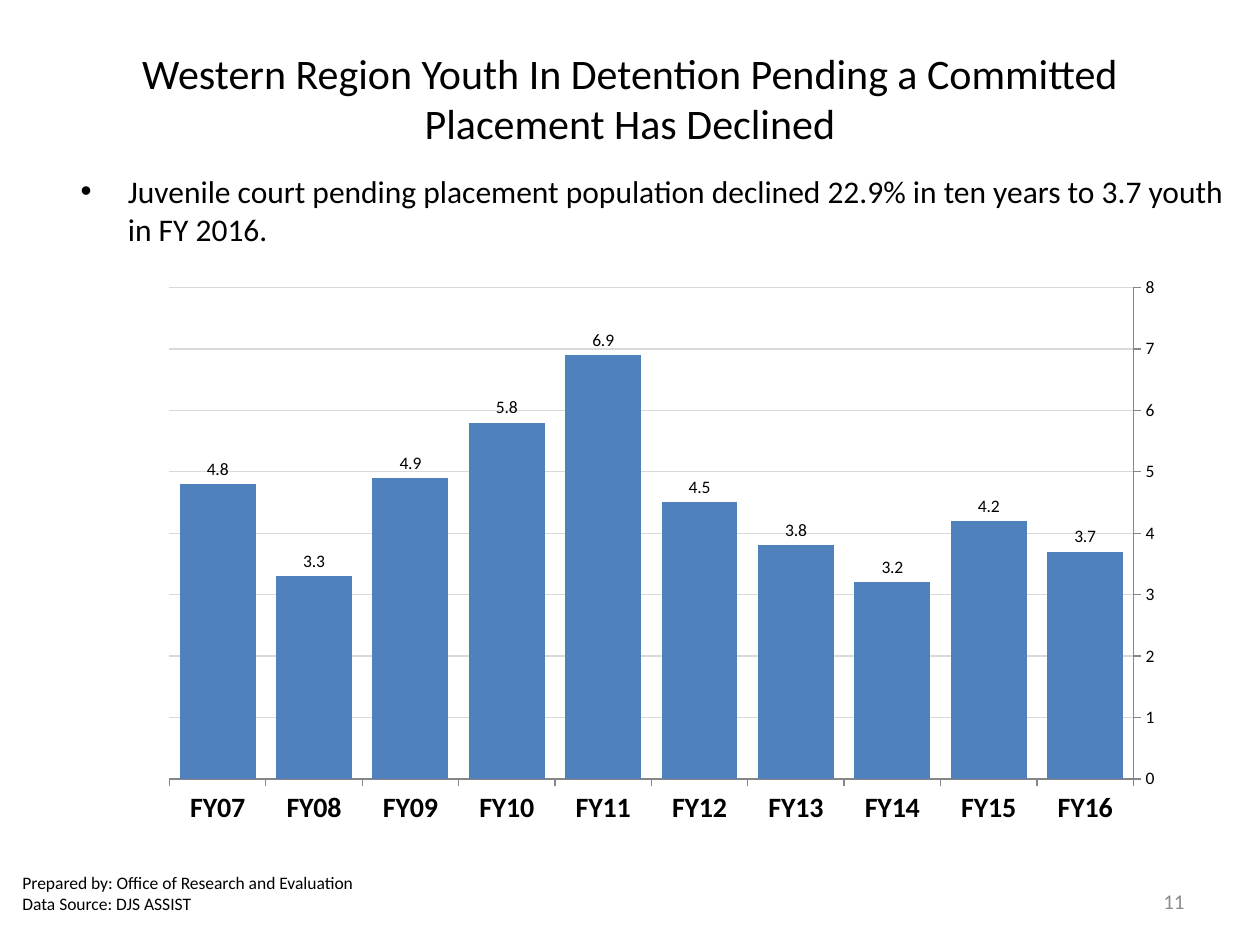
from lxml.etree import SubElement
from pptx import Presentation
from pptx.chart.data import CategoryChartData
from pptx.dml.color import RGBColor
from pptx.enum.chart import XL_AXIS_CROSSES as CROSSES, XL_CHART_TYPE as CHART
from pptx.enum.chart import XL_LABEL_POSITION as LABEL, XL_TICK_MARK as TICK
from pptx.enum.text import MSO_ANCHOR as ANCHOR, MSO_AUTO_SIZE as AUTO, PP_ALIGN as ALIGN
from pptx.oxml.ns import qn
from pptx.util import Inches, Pt

BLACK = RGBColor(0x00, 0x00, 0x00)
GRAY = RGBColor(0x8C, 0x8C, 0x8C)
GRID = RGBColor(0xD9, 0xD9, 0xD9)
AXIS = RGBColor(0x86, 0x86, 0x86)
BLUE = RGBColor(0x4F, 0x81, 0xBD)
FONT = "Calibri"

# Detention averages, latest fiscal year first
YOUTH = {
    "FY16": 3.7, "FY15": 4.2, "FY14": 3.2, "FY13": 3.8, "FY12": 4.5,
    "FY11": 6.9, "FY10": 5.8, "FY09": 4.9, "FY08": 3.3, "FY07": 4.8,
}


def set_font(font, size, color=BLACK, bold=False):
    font.name, font.size, font.bold = FONT, Pt(size), bold
    font.color.rgb = color


def fill_text(sp, box, lines, size, color=BLACK, align=ALIGN.LEFT):
    """Place a text shape and write one paragraph per line."""
    sp.left, sp.top, sp.width, sp.height = map(Inches, box)
    tf = sp.text_frame
    tf.word_wrap = True
    tf.auto_size = AUTO.NONE
    tf.vertical_anchor = ANCHOR.MIDDLE
    tf.text = "\n".join(lines)
    for p in tf.paragraphs:
        p.alignment = align
        set_font(p.font, size, color)


def add_text(slide, box, lines, size, color=BLACK, align=ALIGN.LEFT):
    sp = slide.shapes.add_textbox(*map(Inches, box))
    fill_text(sp, box, lines, size, color, align)


def set_plot_area(chart, x, y, w, h):
    """Fix the inner plot area, in shares of the chart's size."""
    plot_area = chart.plots[0]._element.getparent()
    layout = plot_area.find(qn("c:layout"))
    if layout is None:
        layout = SubElement(plot_area, qn("c:layout"))
        plot_area.insert(0, layout)
    manual = SubElement(layout, qn("c:manualLayout"))
    settings = dict(layoutTarget="inner", xMode="edge", yMode="edge", x=x, y=y, w=w, h=h)
    for tag, value in settings.items():
        SubElement(manual, qn(f"c:{tag}")).set("val", str(value))


def style_axis(axis, size, bold=False):
    axis.major_tick_mark, axis.minor_tick_mark = TICK.OUTSIDE, TICK.NONE
    axis.format.line.color.rgb = AXIS
    axis.format.line.width = Pt(0.75)
    set_font(axis.tick_labels.font, size, bold=bold)


def add_column_chart(slide, box, values):
    data = CategoryChartData(number_format="0.0")
    data.categories = list(values)
    data.add_series("Series 1", list(values.values()))
    chart = slide.shapes.add_chart(CHART.COLUMN_CLUSTERED, *map(Inches, box), data).chart
    chart.has_legend = chart.has_title = False
    set_font(chart.font, 10)
    set_plot_area(chart, 0.07, 0.06, 0.9, 0.83)

    # Years run from right to left, so the value axis crosses at the last one
    years = chart.category_axis
    style_axis(years, 16, bold=True)
    years.reverse_order = True
    years.crosses = CROSSES.MAXIMUM

    scale = chart.value_axis
    style_axis(scale, 10)
    scale.minimum_scale, scale.maximum_scale, scale.major_unit = 0, 8, 1
    scale.tick_labels.number_format = "0"
    scale.tick_labels.number_format_is_linked = False
    scale.major_gridlines.format.line.color.rgb = GRID
    scale.major_gridlines.format.line.width = Pt(0.75)

    # Columns and their labels
    plot = chart.plots[0]
    plot.gap_width = 27
    plot.vary_by_categories = False
    fill = plot.series[0].format.fill
    fill.solid()
    fill.fore_color.rgb = BLUE
    plot.has_data_labels = True
    labels = plot.data_labels
    labels.show_value = True
    labels.number_format = "0.0"
    labels.number_format_is_linked = False
    labels.position = LABEL.OUTSIDE_END
    set_font(labels.font, 10)


def main():
    prs = Presentation()
    prs.slide_width, prs.slide_height = Inches(10), Inches(7.5)
    slide = prs.slides.add_slide(prs.slide_layouts[1])
    title, body = slide.placeholders

    # Heading and key finding
    fill_text(title, (0.5, 0.3, 9, 0.95),
              ["Western Region Youth In Detention Pending a Committed Placement Has Declined"],
              24, align=ALIGN.CENTER)
    fill_text(body, (0.54, 1.08, 9.29, 1.17),
              ["Juvenile court pending placement population declined 22.9% in ten years "
               "to 3.7 youth in FY 2016."], 18)

    add_column_chart(slide, (0.75, 2, 8.5, 4.7), YOUTH)

    # Footer
    add_text(slide, (0.08, 6.83, 2.92, 0.52),
             ["Prepared by: Office of Research and Evaluation", "Data Source: DJS ASSIST"], 10)
    add_text(slide, (7.17, 6.95, 2.33, 0.4), ["11"], 12, GRAY, ALIGN.RIGHT)

    prs.save("out.pptx")


if __name__ == "__main__":
    main()
